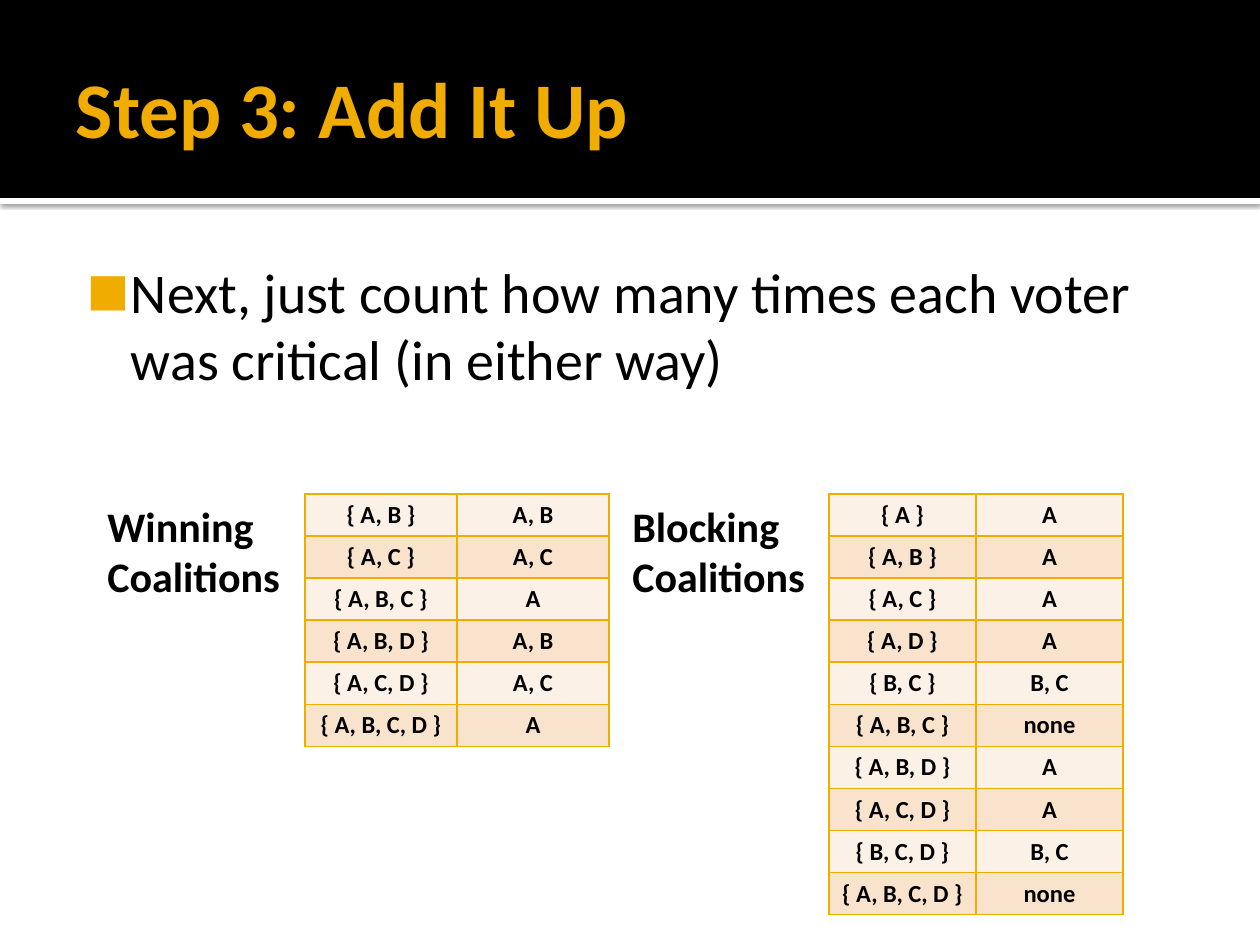
import lxml.etree
import pptx
import pptx.dml.color
import pptx.enum.shapes
import pptx.enum.text
import pptx.oxml
import pptx.oxml.ns
import pptx.util

RGBColor = pptx.dml.color.RGBColor
BLACK = RGBColor(0x00, 0x00, 0x00)
WHITE = RGBColor(0xFF, 0xFF, 0xFF)
GOLD = RGBColor(0xF0, 0xAD, 0x00)
CREAM = RGBColor(0xFC, 0xF1, 0xE7)
PEACH = RGBColor(0xF9, 0xE3, 0xCC)

ALIGN = pptx.enum.text.PP_ALIGN
ANCHOR = pptx.enum.text.MSO_ANCHOR
DRAWING_NS = pptx.oxml.ns.nsdecls("a")

WINNING = [
    ("{ A, B }", "A, B"),
    ("{ A, C }", "A, C"),
    ("{ A, B, C }", "A"),
    ("{ A, B, D }", "A, B"),
    ("{ A, C, D }", "A, C"),
    ("{ A, B, C, D }", "A"),
]
BLOCKING = [
    ("{ A }", "A"),
    ("{ A, B }", "A"),
    ("{ A, C }", "A"),
    ("{ A, D }", "A"),
    ("{ B, C }", "B, C"),
    ("{ A, B, C }", "none"),
    ("{ A, B, D }", "A"),
    ("{ A, C, D }", "A"),
    ("{ B, C, D }", "B, C"),
    ("{ A, B, C, D }", "none"),
]


def px(length):
    """Turn px, 126 to the inch, into EMU."""
    return pptx.util.Emu(round(length * 914400 / 126))


def write_text(frame, text, size, color=BLACK, bold=False, align=ALIGN.LEFT):
    paragraph = frame.paragraphs[0]
    paragraph.alignment = align
    run = paragraph.add_run()
    run.text = text
    run.font.name = "Calibri"
    run.font.size = pptx.util.Pt(size)
    run.font.bold = bold
    run.font.color.rgb = color
    return paragraph


def set_margins(frame, left, top, right, bottom):
    frame.margin_left, frame.margin_top = px(left), px(top)
    frame.margin_right, frame.margin_bottom = px(right), px(bottom)


def add_borders(cell, color):
    properties = cell._tc.get_or_add_tcPr()
    for index, side in enumerate("LRTB"):
        properties.insert(index, pptx.oxml.parse_xml(
            f'<a:ln{side} {DRAWING_NS} w="12700"><a:solidFill>'
            f'<a:srgbClr val="{color}"/></a:solidFill></a:ln{side}>'))


class CoalitionSlide:
    def __init__(self, presentation):
        self.slide = presentation.slides.add_slide(presentation.slide_layouts[5])
        self.shapes = self.slide.shapes

    def band(self, top, height, color, shadow=False):
        """Draw a full-width strip behind the title."""
        band = self.shapes.add_shape(
            pptx.enum.shapes.MSO_SHAPE.RECTANGLE, 0, px(top), px(1260), px(height))
        band.shadow.inherit = False
        band.fill.solid()
        band.fill.fore_color.rgb = color
        band.line.fill.background()
        if shadow:
            effects = band._element.spPr.find(pptx.oxml.ns.qn("a:effectLst"))
            effects.append(pptx.oxml.parse_xml(
                f'<a:outerShdw {DRAWING_NS} blurRad="31750" dist="10160" dir="5400000">'
                f'<a:srgbClr val="{BLACK}"><a:alpha val="60000"/></a:srgbClr></a:outerShdw>'))
        self.shapes.title._element.addprevious(band._element)

    def title(self, text, left, top, width, height):
        title = self.shapes.title
        title.left, title.top = px(left), px(top)
        title.width, title.height = px(width), px(height)
        frame = title.text_frame
        frame.vertical_anchor = ANCHOR.MIDDLE
        set_margins(frame, 13, 6, 6, 6)
        write_text(frame, text, 45, GOLD, bold=True)

    def text_box(self, left, top, width, height):
        box = self.shapes.add_textbox(px(left), px(top), px(width), px(height))
        box.text_frame.word_wrap = True
        return box.text_frame

    def bullet(self, text, left, top, width, height):
        frame = self.text_box(left, top, width, height)
        set_margins(frame, 8, 13, 13, 6)
        properties = write_text(frame, text, 32)._p.get_or_add_pPr()
        properties.set("marL", str(px(60)))
        properties.set("indent", str(px(-44)))
        for markup in (
            f'<a:buClr {DRAWING_NS}><a:srgbClr val="{GOLD}"/></a:buClr>',
            f'<a:buSzPct {DRAWING_NS} val="80000"/>',
            f'<a:buFont {DRAWING_NS} typeface="Calibri"/>',
            f'<a:buChar {DRAWING_NS} char="■"/>',
        ):
            properties.append(pptx.oxml.parse_xml(markup))

    def label(self, text, left, top):
        write_text(self.text_box(left, top, 231, 115), text, 24, bold=True)

    def table(self, rows, left, top, column_width, row_height=42):
        table = self.shapes.add_table(
            len(rows), 2, px(left), px(top),
            px(2 * column_width), px(len(rows) * row_height)).table
        for column in table.columns:
            column.width = px(column_width)
        for row_index, row in enumerate(rows):
            table.rows[row_index].height = px(row_height)
            for column_index, text in enumerate(row):
                cell = table.cell(row_index, column_index)
                cell.fill.solid()
                cell.fill.fore_color.rgb = PEACH if row_index % 2 else CREAM
                add_borders(cell, GOLD)
                write_text(cell.text_frame, text, 14, bold=True, align=ALIGN.CENTER)


def main():
    presentation = pptx.Presentation()
    presentation.slide_width, presentation.slide_height = px(1260), px(945)
    slide = CoalitionSlide(presentation)

    slide.band(198, 6, WHITE, shadow=True)
    slide.band(0, 198, BLACK)
    slide.title("Step 3: Add It Up", 63, 21, 1134, 173)
    slide.bullet("Next, just count how many times each voter was critical (in either way)",
                 63, 244, 1134, 638)

    coalitions_top = 494
    slide.table(BLOCKING, 829, coalitions_top, 147)
    slide.table(WINNING, 305, coalitions_top, 152)
    slide.label("Blocking Coalitions", 620, coalitions_top)
    slide.label("Winning Coalitions", 95, coalitions_top)

    presentation.save("out.pptx")


if __name__ == "__main__":
    main()
